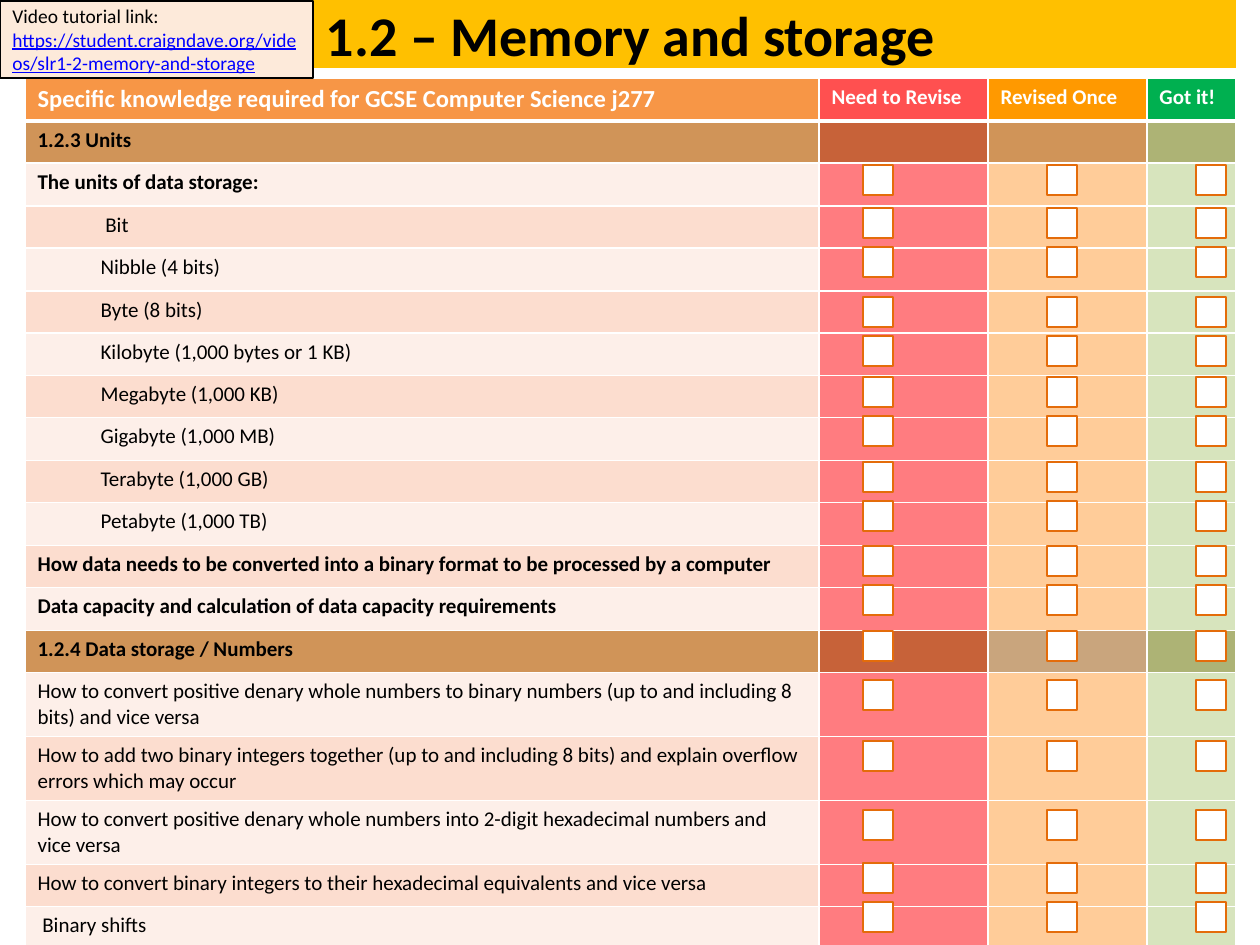
from lxml import etree
from pptx import Presentation, util as u
from pptx.dml.color import RGBColor
from pptx.enum import shapes, text
from pptx.oxml import ns

PX = 7257  # EMU in one pixel, 126 pixels to the inch
COLORS = {
    "gold": "FFC000", "black": "000000", "white": "FFFFFF", "link": "0000FF",
    "orange": "F79646", "red": "FF5050", "amber": "FF9900", "green": "00B050",
    "brown": "D09458", "rust": "C76239", "tan": "C9A57D", "olive": "ADB375",
    "light": "FDEFE9", "dark": "FCDDCF", "pink": "FF7C80", "peach": "FFCC99",
    "mint": "D7E4BD", "cream": "FDEADA", "box_line": "E46C0A",
}
COLUMN_WIDTHS = [794, 169, 159, 89]
LAST_ROW_HEIGHT = 39
TALL_ROW_HEIGHT = 64
INDENT = 63
TOPIC_RIGHT_MARGIN = 18
# Each topic: kind, wording
TOPICS = [
    ("section", "1.2.3 Units"),
    ("bold", "The units of data storage:"),
    ("unit", " Bit"),
    ("unit", "Nibble (4 bits)"),
    ("unit", "Byte (8 bits)"),
    ("unit", "Kilobyte (1,000 bytes or 1 KB)"),
    ("unit", "Megabyte (1,000 KB)"),
    ("unit", "Gigabyte (1,000 MB)"),
    ("unit", "Terabyte (1,000 GB)"),
    ("unit", "Petabyte (1,000 TB)"),
    ("bold", "How data needs to be converted into a binary format to be processed by a computer"),
    ("bold", "Data capacity and calculation of data capacity requirements"),
    ("section", "1.2.4 Data storage / Numbers"),
    ("tall", "How to convert positive denary whole numbers to binary numbers "
             "(up to and including 8 bits) and vice versa"),
    ("tall", "How to add two binary integers together (up to and including 8 bits) "
             "and explain overflow errors which may occur"),
    ("tall", "How to convert positive denary whole numbers into 2-digit hexadecimal "
             "numbers and vice versa"),
    ("plain", "How to convert binary integers to their hexadecimal equivalents and vice versa"),
    ("plain", " Binary shifts"),
]
HEADERS = ["Specific knowledge required for GCSE Computer Science j277",
           "Need to Revise", "Revised Once", "Got it!"]
CHECKBOX_SIZE = 30
CHECKBOX_LEFTS = [863, 1047, 1196]
CHECKBOX_TOPS = [165, 208, 247, 297, 336, 377, 416, 462, 501, 546, 585, 631,
                 680, 741, 810, 863, 902]


def rgb(name):
    return RGBColor.from_string(COLORS[name])


def write(para, words, size=12, color="black", bold=False, underline=None):
    span = para.add_run()
    span.text = words
    font = span.font
    font.name, font.size, font.bold = "Calibri", u.Pt(size), bold
    font.underline = underline
    font.color.rgb = rgb(color)


deck = Presentation()
deck.slide_width, deck.slide_height = u.Inches(10), u.Inches(7.5)
page = deck.slides.add_slide(deck.slide_layouts[5])

title = page.shapes.title
title.left, title.top, title.width, title.height = [n * PX for n in (25, 0, 1211, 68)]
title.fill.solid()
title.fill.fore_color.rgb = rgb("gold")
title.text_frame.vertical_anchor = text.MSO_ANCHOR.MIDDLE
title_para = title.text_frame.paragraphs[0]
title_para.alignment = text.PP_ALIGN.CENTER
write(title_para, "1.2 – Memory and storage", size=32, bold=True)

# Checklist table
heights = [43 - row % 2 for row in range(len(TOPICS) + 1)]
for row, (kind, _) in enumerate(TOPICS, 1):
    if kind == "tall":
        heights[row] = TALL_ROW_HEIGHT
heights[-1] = LAST_ROW_HEIGHT

frame = page.shapes.add_table(len(heights), len(COLUMN_WIDTHS), 25 * PX, 78 * PX,
                              sum(COLUMN_WIDTHS) * PX, sum(heights) * PX)
table = frame.table
table.horz_banding = False
for column, width in zip(table.columns, COLUMN_WIDTHS):
    column.width = width * PX
for table_row, height in zip(table.rows, heights):
    table_row.height = height * PX

for column, words in enumerate(HEADERS):
    write(table.cell(0, column).text_frame.paragraphs[0], words,
          size=12 if column else 14, color="white", bold=True)

fills = [["orange", "red", "amber", "green"]]
for row, (kind, words) in enumerate(TOPICS, 1):
    topic = table.cell(row, 0)
    topic.margin_right = TOPIC_RIGHT_MARGIN * PX
    para = topic.text_frame.paragraphs[0]
    if kind == "unit":
        para.level = 1
        para._p.get_or_add_pPr().set("marL", str(INDENT * PX))
    write(para, words, bold=kind in ("section", "bold"))
    if kind == "section":
        fills.append(["brown", "rust", "brown" if row == 1 else "tan", "olive"])
    else:
        fills.append(["dark" if row % 2 else "light", "pink", "peach", "mint"])

for row, row_fills in enumerate(fills):
    for column, color in enumerate(row_fills):
        cell = table.cell(row, column)
        cell.fill.solid()
        cell.fill.fore_color.rgb = rgb(color)
        if not cell.text_frame.text:  # keeps an empty cell from stretching its row
            etree.SubElement(cell.text_frame.paragraphs[0]._p,
                             ns.qn("a:endParaRPr"), sz="1200")
        properties = cell._tc.get_or_add_tcPr()
        for place, side in enumerate(["lnL", "lnR", "lnT", "lnB"]):
            thick = (row, side) in [(0, "lnB"), (1, "lnT")]
            border = etree.Element(ns.qn("a:" + side), w=str(u.Pt(3 if thick else 1)))
            paint = etree.SubElement(border, ns.qn("a:solidFill"))
            etree.SubElement(paint, ns.qn("a:srgbClr"), val=COLORS["white"])
            properties.insert(place, border)

for top in CHECKBOX_TOPS:
    for left in CHECKBOX_LEFTS:
        checkbox = page.shapes.add_shape(shapes.MSO_SHAPE.RECTANGLE, left * PX, top * PX,
                                         CHECKBOX_SIZE * PX, CHECKBOX_SIZE * PX)
        checkbox.shadow.inherit = False
        checkbox.fill.solid()
        checkbox.fill.fore_color.rgb = rgb("white")
        checkbox.line.color.rgb = rgb("box_line")
        checkbox.line.width = u.Pt(1.5)

video = page.shapes.add_textbox(0, 1 * PX, 313 * PX, 77 * PX)
video.fill.solid()
video.fill.fore_color.rgb = rgb("cream")
video.line.color.rgb = rgb("black")
video.line.width = u.Pt(1.5)
video.text_frame.word_wrap = True
video.text_frame.vertical_anchor = text.MSO_ANCHOR.MIDDLE
video_para = video.text_frame.paragraphs[0]
write(video_para, "Video tutorial link: ", size=11.1)
write(video_para, "https://student.craigndave.org/videos/slr1-2-memory-and-storage",
      size=11.1, color="link", underline=True)

deck.save("out.pptx")
